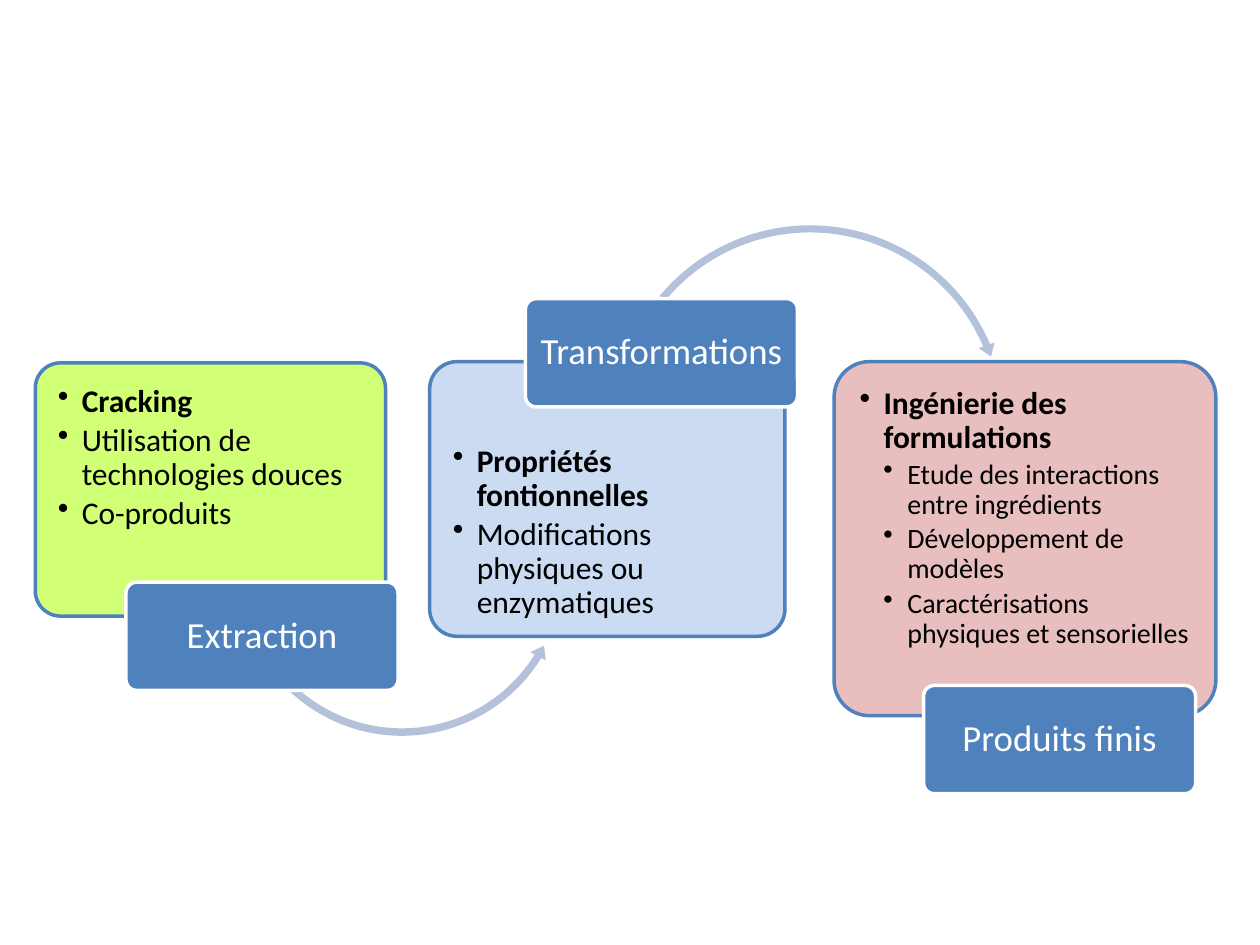
from lxml import etree
from pptx import Presentation
from pptx.dml.color import RGBColor
from pptx.enum.shapes import MSO_SHAPE
from pptx.enum.text import MSO_ANCHOR, PP_ALIGN
from pptx.oxml.ns import qn
from pptx.util import Inches, Pt

ROUNDED = MSO_SHAPE.ROUNDED_RECTANGLE
ARROW_LEFT = MSO_SHAPE.LEFT_CIRCULAR_ARROW
ARROW_RIGHT = MSO_SHAPE.CIRCULAR_ARROW
TOP, MIDDLE = MSO_ANCHOR.TOP, MSO_ANCHOR.MIDDLE
LEFT, CENTER = PP_ALIGN.LEFT, PP_ALIGN.CENTER

COLORS = {
    "blue": "4F81BD", "arrow": "B3C1DB", "white": "FFFFFF", "black": "000000",
    "green": "CCFF66", "sky": "C6D9F1", "rose": "E6B9B8",
}
FONT = "Calibri"
LABEL_SIZE = (2.16, 0.86)
INDENT = 0.19
LEVEL_SIZES = {1: 18, 2: 16}

# Each step: card box, card colour, top inset, label position, (level, bold, text) items
STEPS = [
    ((0.28, 2.88, 2.78, 2.01), "green", 0.12, (1, 4.62), "Extraction", [
        (1, True, "Cracking"),
        (1, False, "Utilisation de technologies douces"),
        (1, False, "Co-produits"),
    ]),
    ((3.41, 2.87, 2.82, 2.18), "sky", 0.6, (4.17, 2.37), "Transformations", [
        (1, True, "Propriétés fontionnelles"),
        (1, False, "Modifications physiques ou enzymatiques"),
    ]),
    ((6.62, 2.87, 3.03, 2.81), "rose", 0.12, (7.33, 5.44), "Produits finis", [
        (1, True, "Ingénierie des formulations"),
        (2, False, "Etude des interactions entre ingrédients"),
        (2, False, "Développement de modèles"),
        (2, False, "Caractérisations physiques et sensorielles"),
    ]),
]

# Arrow leaving each step: kind, box, thickness %, head, end and start angles, head width %
ARROWS = [
    (ARROW_LEFT, (1.85, 3.2, 2.68, 2.68), (2.2, 4.39, 31.78, 148.21, 2.6)),
    (ARROW_RIGHT, (4.84, 1.75, 3.18, 3.18), (1.8, 3.67, 336.82, 219.67, 2.1)),
]


def color(name):
    return RGBColor.from_string(COLORS[name])


def add_filled(slide, kind, box, fill):
    shape = slide.shapes.add_shape(kind, *map(Inches, box))
    shape.shadow.inherit = False
    shape.fill.solid()
    shape.fill.fore_color.rgb = color(fill)
    shape.line.fill.background()
    return shape


def add_rounded(slide, box, fill, line):
    shape = add_filled(slide, ROUNDED, box, fill)
    shape.adjustments[0] = 0.1
    shape.line.color.rgb = color(line)
    shape.line.width = Pt(2)
    return shape


def set_frame(shape, anchor, side, top):
    frame = shape.text_frame
    frame.word_wrap = True
    frame.vertical_anchor = anchor
    frame.margin_left = frame.margin_right = Inches(side)
    frame.margin_top = Inches(top)
    frame.margin_bottom = Inches(0.03)
    return frame


def write(paragraph, text, size, ink, align, bold=False):
    paragraph.alignment = align
    paragraph.line_spacing = 0.9
    run = paragraph.add_run()
    run.text = text
    run.font.name = FONT
    run.font.size = Pt(size)
    run.font.bold = bold
    run.font.color.rgb = color(ink)


def set_bullet(paragraph, level):
    properties = paragraph._p.get_or_add_pPr()
    properties.set("marL", str(Inches(INDENT * level)))
    properties.set("indent", str(-Inches(INDENT)))
    etree.SubElement(properties, qn("a:buChar")).set("char", "•")


def add_card(slide, box, fill, top, items):
    card = add_rounded(slide, box, fill, "blue")
    fill_color = card.fill._xPr.find(qn("a:solidFill"))[0]
    etree.SubElement(fill_color, qn("a:alpha")).set("val", "90000")
    frame = set_frame(card, TOP, 0.12, top)
    for index, (level, bold, text) in enumerate(items):
        paragraph = frame.add_paragraph() if index else frame.paragraphs[0]
        size = LEVEL_SIZES[level]
        write(paragraph, text, size, "black", LEFT, bold)
        paragraph.level = level - 1
        paragraph.space_after = Pt(size * 0.15)
        set_bullet(paragraph, level)


def add_arrow(slide, kind, box, geometry):
    arrow = add_filled(slide, kind, box, "arrow")
    thickness, head, end, start, head_width = geometry
    # Angles are stored in 60000ths of a degree, adjustments in 100000ths
    values = [thickness / 100, head * 0.6, end * 0.6, start * 0.6, head_width / 100]
    for index, value in enumerate(values):
        arrow.adjustments[index] = value


def add_label(slide, position, text):
    label = add_rounded(slide, position + LABEL_SIZE, "blue", "white")
    frame = set_frame(label, MIDDLE, 0.04, 0.03)
    write(frame.paragraphs[0], text, 21, "white", CENTER)


def main():
    presentation = Presentation()
    presentation.slide_width, presentation.slide_height = Inches(10), Inches(7.5)
    slide = presentation.slides.add_slide(presentation.slide_layouts[6])

    # Steps from left to right, each arrow tucked under its label
    for index, (box, fill, top, position, title, items) in enumerate(STEPS):
        add_card(slide, box, fill, top, items)
        if index < len(ARROWS):
            add_arrow(slide, *ARROWS[index])
        add_label(slide, position, title)

    presentation.save("out.pptx")


if __name__ == "__main__":
    main()
